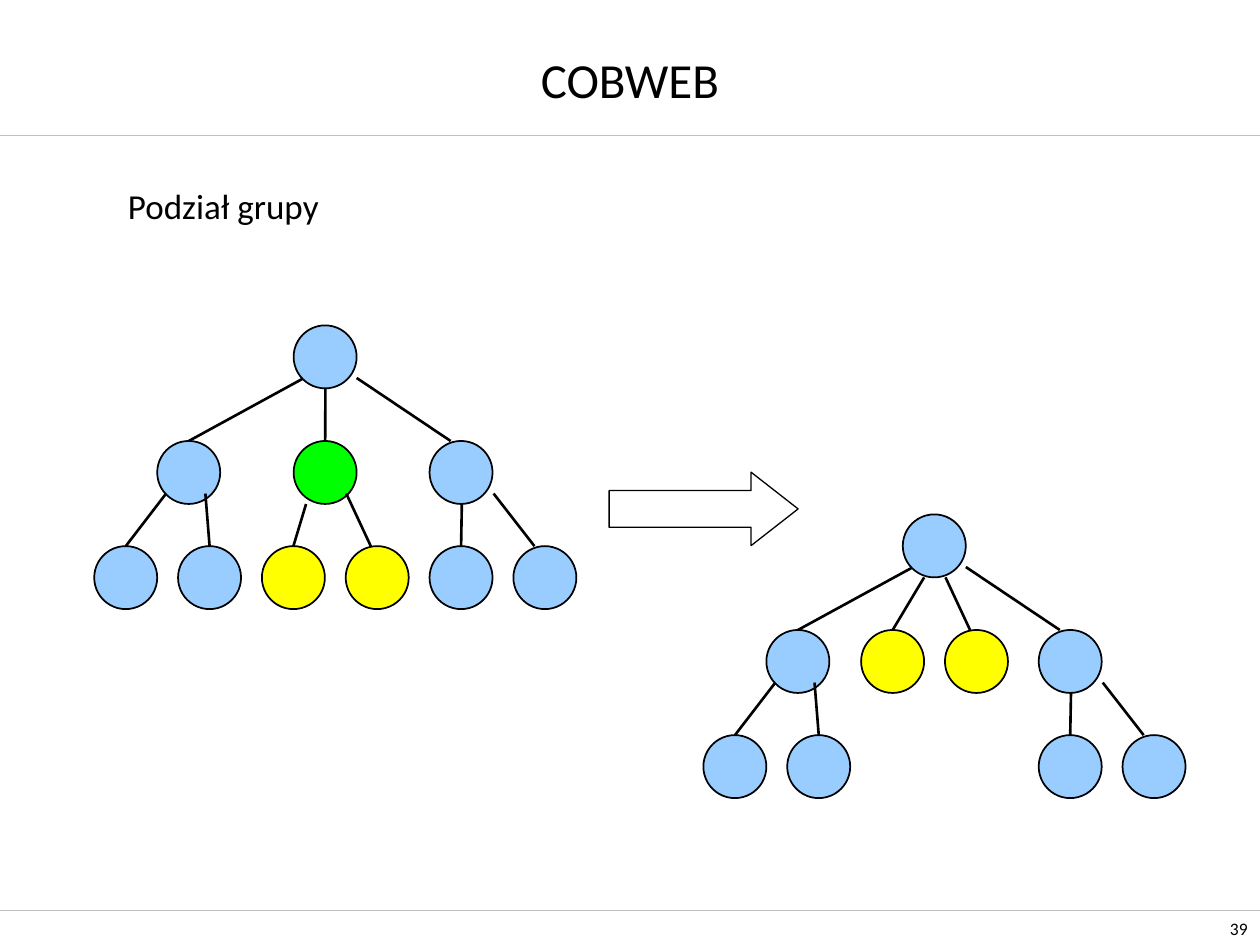
"""Build the COBWEB slide that shows a group being split."""
from lxml.etree import SubElement
from pptx import Presentation
from pptx.dml.color import RGBColor
from pptx.enum.shapes import MSO_CONNECTOR, MSO_SHAPE
from pptx.enum.text import MSO_ANCHOR, PP_ALIGN
from pptx.oxml.ns import qn
from pptx.util import Cm, Pt

BLACK, GREY, BLUE, GREEN, YELLOW = "000000", "C0C0C0", "99CCFF", "00FF00", "FFFF00"
WIDTH, HEIGHT = 25.4, 19.05
SIZE, PITCH = 1.27, 1.69
LEVELS = (0, 2.12, 4.23)
LEVELS = (0, 2.33, 4.45)

TEXTS = [
    ("COBWEB", (1.9, 0, 21.6, 3.18), 28, True,
     {"alignment": PP_ALIGN.CENTER}, {"vertical_anchor": MSO_ANCHOR.MIDDLE}),
    ("Podział grupy", (2.33, 3.6, 4.8, 1.1), 20, False,
     {"alignment": PP_ALIGN.LEFT}, {"vertical_anchor": MSO_ANCHOR.TOP}),
    ("39", (24.1, 18.34, 1.3, 0.71), 10, True,
     {"alignment": PP_ALIGN.RIGHT}, {"vertical_anchor": MSO_ANCHOR.BOTTOM}),
]
RULES = (2.72, 18.34)

ROOT = (4.02, 0, BLUE)
SHARED_NODES = {
    "left": (1.27, 1, BLUE), "right": (4 * PITCH, 1, BLUE),
    "leaf 1": (0, 2, BLUE), "leaf 2": (PITCH, 2, BLUE),
    "leaf 5": (4 * PITCH, 2, BLUE), "leaf 6": (5 * PITCH, 2, BLUE),
}
SHARED_EDGES = [
    (4.23, 1.06, "left", 0), (5.29, 1.06, "right", -0.21),
    (1.45, 3.39, "leaf 1", 0), (2.24, 3.39, "leaf 2", 0),
    (7.41, 3.6, "leaf 5", 0), (8.05, 3.39, "leaf 6", -0.21),
]
TREES = [
    ((1.9, 6.56),
     {"split": (4.02, 1, GREEN),
      "leaf 3": (2 * PITCH, 2, YELLOW), "leaf 4": (3 * PITCH, 2, YELLOW)},
     [(4.66, 1.27, "split", 0),
      (4.27, 3.6, "leaf 3", 0), (5.08, 3.39, "leaf 4", -0.13)]),
    ((14.18, 10.37),
     {"leaf 3": (3.18, 1, YELLOW), "leaf 4": (3.18 + PITCH, 1, YELLOW)},
     [(4.45, 1.27, "leaf 3", 0), (4.88, 1.27, "leaf 4", -0.13)]),
]


def rgb(value):
    """Return the colour for a hex string."""
    return RGBColor.from_string(value)


def assign(obj, values):
    """Set attributes from a dict."""
    for name, value in values.items():
        setattr(obj, name, value)


def add_shape(shapes, kind, box, fill, width):
    """Add an outlined preset shape."""
    sp = shapes.add_shape(kind, *map(Cm, box))
    sp.shadow.inherit = False
    if fill:
        sp.fill.solid()
        sp.fill.fore_color.rgb = rgb(fill)
    else:
        sp.fill.background()
    sp.line.color.rgb = rgb(BLACK)
    sp.line.width = Pt(width)
    return sp


def add_line(shapes, ends, color, width):
    """Add a straight line without a shadow."""
    line = shapes.add_connector(MSO_CONNECTOR.STRAIGHT, *map(Cm, ends))
    line.line.color.rgb = rgb(color)
    line.line.width = Pt(width)
    SubElement(line._element.spPr, qn("a:effectLst"))
    return line


def add_text(s, text, box, size, wrap, para, frame):
    """Add a one-paragraph text box."""
    tf = s.shapes.add_textbox(*map(Cm, box)).text_frame
    assign(tf, {"word_wrap": wrap, **frame})
    p = tf.paragraphs[0]
    assign(p, para)
    r = p.add_run()
    r.text = text
    assign(r.font, {"name": "Calibri", "size": Pt(size)})
    r.font.color.rgb = rgb(BLACK)


def add_tree(s, origin, own_nodes, own_edges):
    """Add one grouped tree with its root in front."""
    shapes = s.shapes.add_group_shape().shapes
    left, top = origin
    nodes = {**SHARED_NODES, **own_nodes}

    def add_node(x, level, fill):
        box = (left + x, top + LEVELS[level], SIZE, SIZE)
        return add_shape(shapes, MSO_SHAPE.OVAL, box, fill, 1)

    circles = {name: add_node(*node) for name, node in nodes.items()}
    for x, y, child, shift in SHARED_EDGES + own_edges:
        node_x, level, _ = nodes[child]
        end = (left + node_x + SIZE / 2 + shift, top + LEVELS[level])
        line = add_line(shapes, (left + x, top + y, *end), BLACK, 1.5)
        if not shift:
            line.end_connect(circles[child], 0)
    add_node(*ROOT)


def main():
    """Build and save the slide."""
    prs = Presentation()
    assign(prs, {"slide_width": Cm(WIDTH), "slide_height": Cm(HEIGHT)})
    s = prs.slides.add_slide(prs.slide_layouts[6])
    for y in RULES:
        add_line(s.shapes, (0, y, WIDTH, y), GREY, 0.25)
    for tree in TREES:
        add_tree(s, *tree)
    arrow = add_shape(s.shapes, MSO_SHAPE.RIGHT_ARROW, (12.28, 9.52, 3.81, 1.48), None, 0.75)
    arrow.adjustments[0], arrow.adjustments[1] = 0.5, 0.64
    for text in TEXTS:
        add_text(s, *text)
    prs.save("out.pptx")


if __name__ == "__main__":
    main()
